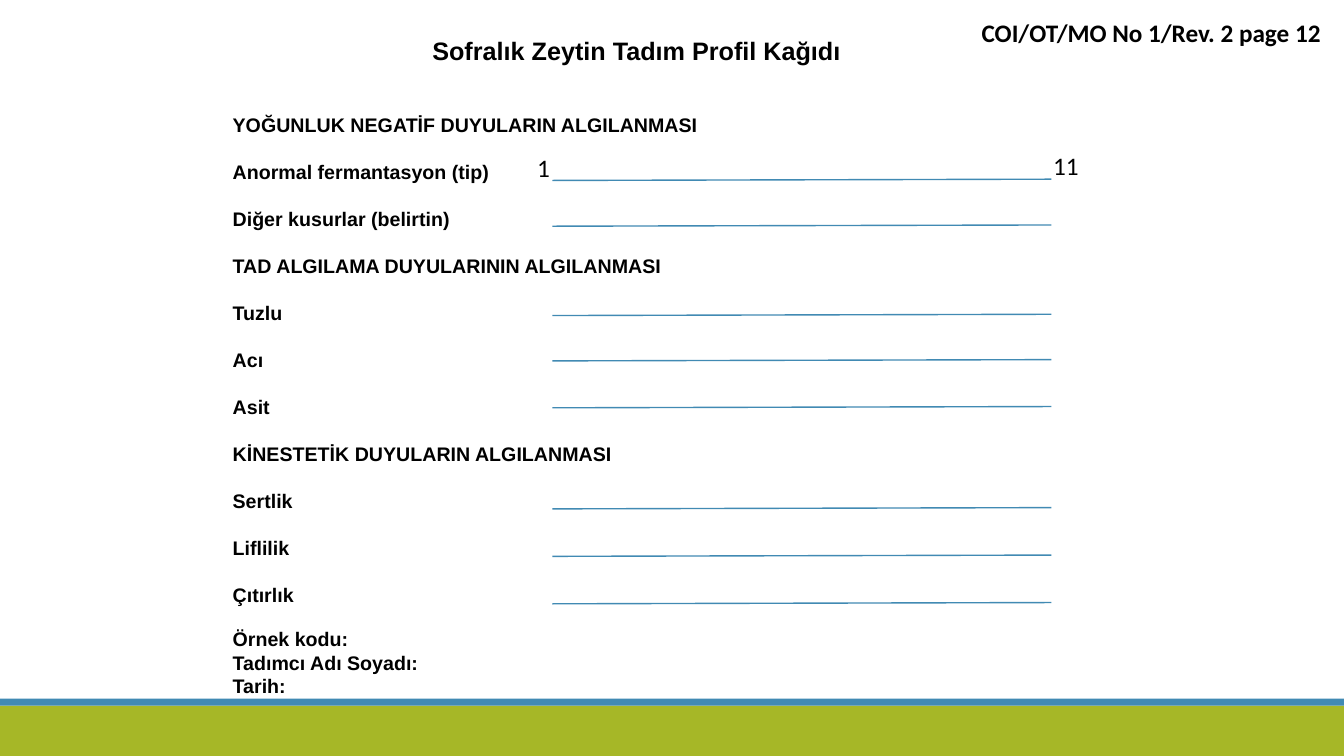
from pptx import Presentation
from pptx.dml.color import RGBColor
from pptx.enum.shapes import MSO_CONNECTOR, MSO_SHAPE
from pptx.enum.text import PP_ALIGN
from pptx.oxml.ns import qn
from pptx.util import Pt
from lxml.etree import SubElement


def color(hex_code):
    return RGBColor.from_string(hex_code)


def style(para, size, font_name, bold):
    for span in para.runs:
        span.font.size = Pt(size)
        span.font.name = font_name
        span.font.bold = bold
        span.font.color.rgb = color("000000")


deck = Presentation()
deck.slide_width, deck.slide_height = Pt(960), Pt(540)
page = deck.slides.add_slide(deck.slide_layouts[6])

# Footer bands
for top, height, fill in [(504, 36, "A6B727"), (499, 5, "418AB3")]:
    band = page.shapes.add_shape(MSO_SHAPE.RECTANGLE, 0, Pt(top), Pt(960), Pt(height))
    band.shadow.inherit = False
    band.fill.solid()
    band.fill.fore_color.rgb = color(fill)
    band.line.fill.background()

# Form text: wording and space before, in points
LINE = 16.8
form = [
    ("Sofralık Zeytin Tadım Profil Kağıdı", 0),
    ("YOĞUNLUK NEGATİF DUYULARIN ALGILANMASI", 2 * LINE),
    ("Anormal fermantasyon (tip)", LINE),
    ("Diğer kusurlar (belirtin)", LINE),
    ("TAD ALGILAMA DUYULARININ ALGILANMASI", LINE),
    ("Tuzlu", LINE),
    ("Acı", LINE),
    ("Asit", LINE),
    ("KİNESTETİK DUYULARIN ALGILANMASI", LINE),
    ("Sertlik", LINE),
    ("Liflilik", LINE),
    ("Çıtırlık", LINE),
    ("Örnek kodu:", 14.4),
    ("Tadımcı Adı Soyadı:", 0),
    ("Tarih:", 0),
]
box = page.shapes.add_textbox(Pt(159.1), 0, Pt(591.1), Pt(506))
frame = box.text_frame
frame.word_wrap = True
frame.margin_top = Pt(25.2)
frame.text = "\n".join(text for text, gap in form)
for para, (text, gap) in zip(frame.paragraphs, form):
    para.line_spacing = Pt(LINE)
    para.space_before = Pt(gap)
    style(para, 14, "Arial", True)
title = frame.paragraphs[0]
title.alignment = PP_ALIGN.CENTER
title.line_spacing = Pt(21.6)
style(title, 18, "Arial", True)

# Rating scales, each rising slightly to the right
for scale_y in [128.9, 161.6, 225.4, 257.8, 291.3, 363.5, 397.4, 431.3]:
    scale = page.shapes.add_connector(
        MSO_CONNECTOR.STRAIGHT, Pt(394.6), Pt(scale_y), Pt(751), Pt(scale_y - 0.9))
    scale.line.color.rgb = color("418AB3")
    scale.line.width = Pt(1)
    SubElement(scale.element.spPr, qn("a:effectLst"))

# Page reference and scale ends
for text, left, top, width, bold in [
    ("COI/OT/MO No 1/Rev. 2 page 12", 694.1, 8.6, 265.9, True),
    ("1", 376.6, 105.1, 36, False),
    ("11", 745.2, 103.7, 36, False),
]:
    label = page.shapes.add_textbox(Pt(left), Pt(top), Pt(width), Pt(29))
    label.text_frame.word_wrap = True
    label.text_frame.text = text
    style(label.text_frame.paragraphs[0], 18, "Calibri", bold)

deck.save("out.pptx")
